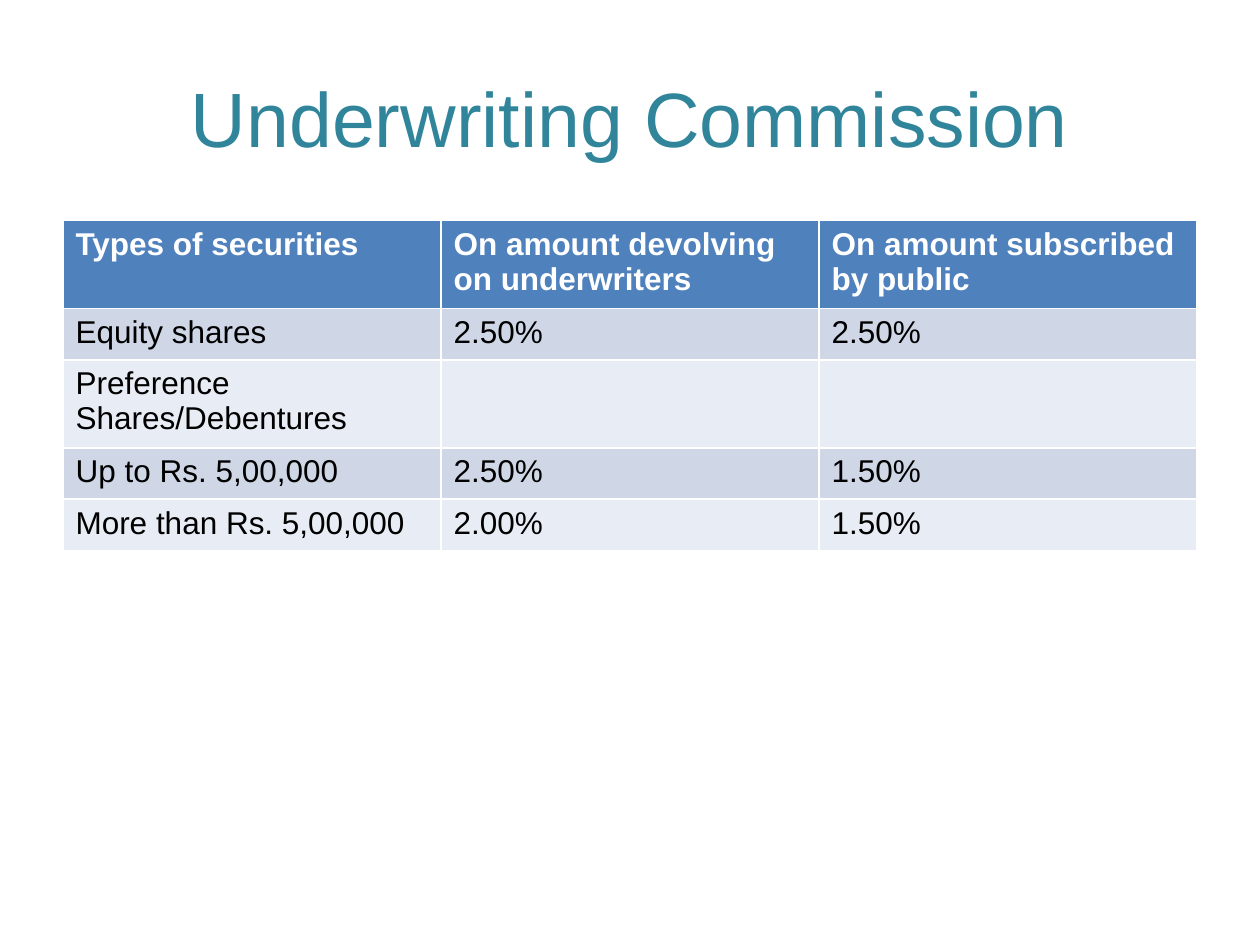
import pptx
import pptx.dml.color
import pptx.enum.text
import pptx.util

Pt = pptx.util.Pt
RGBColor = pptx.dml.color.RGBColor

TEAL = RGBColor(0x31, 0x85, 0x9B)
HEADER_BLUE = RGBColor(0x4F, 0x81, 0xBD)
BANDS = (RGBColor(0xCF, 0xD7, 0xE7), RGBColor(0xE8, 0xEC, 0xF4))
WHITE = RGBColor(0xFF, 0xFF, 0xFF)
BLACK = RGBColor(0x00, 0x00, 0x00)

FONT = "Arial"
ROW_HEIGHT = 29.2
COMMISSION_RATES = [
    ("Types of securities", "On amount devolving on underwriters",
     "On amount subscribed by public"),
    ("Equity shares", "2.50%", "2.50%"),
    ("Preference Shares/Debentures", "", ""),
    ("Up to Rs. 5,00,000", "2.50%", "1.50%"),
    ("More than Rs. 5,00,000", "2.00%", "1.50%"),
]


def style_text(frame, size, color, bold=False):
    for para in frame.paragraphs:
        for item in (para, *para.runs):
            item.font.name = FONT
            item.font.size = Pt(size)
            item.font.bold = bold
            item.font.color.rgb = color


def add_title(page, text, left, top, width, height):
    box = page.shapes.add_textbox(Pt(left), Pt(top), Pt(width), Pt(height))
    frame = box.text_frame
    frame.word_wrap = True
    frame.vertical_anchor = pptx.enum.text.MSO_ANCHOR.MIDDLE
    frame.text = text
    frame.paragraphs[0].alignment = pptx.enum.text.PP_ALIGN.CENTER
    style_text(frame, 44, TEAL)


def add_rate_table(page, rows, left, top, width):
    """Rows start one line high and grow to fit; white rules come from the table style."""
    table = page.shapes.add_table(
        len(rows), len(rows[0]), Pt(left), Pt(top), Pt(width), Pt(ROW_HEIGHT * len(rows))
    ).table
    for row_index, row in enumerate(rows):
        is_header = row_index == 0
        fill = HEADER_BLUE if is_header else BANDS[(row_index - 1) % 2]
        for column_index, text in enumerate(row):
            cell = table.cell(row_index, column_index)
            cell.fill.solid()
            cell.fill.fore_color.rgb = fill
            cell.text_frame.text = text
            style_text(cell.text_frame, 18, WHITE if is_header else BLACK, is_header)


def main():
    deck = pptx.Presentation()
    deck.slide_width, deck.slide_height = Pt(720), Pt(540)
    page = deck.slides.add_slide(deck.slide_layouts[6])
    add_title(page, "Underwriting Commission", 36, 21.6, 648, 90)
    add_rate_table(page, COMMISSION_RATES, 36, 126, 648)
    deck.save("out.pptx")


if __name__ == "__main__":
    main()
